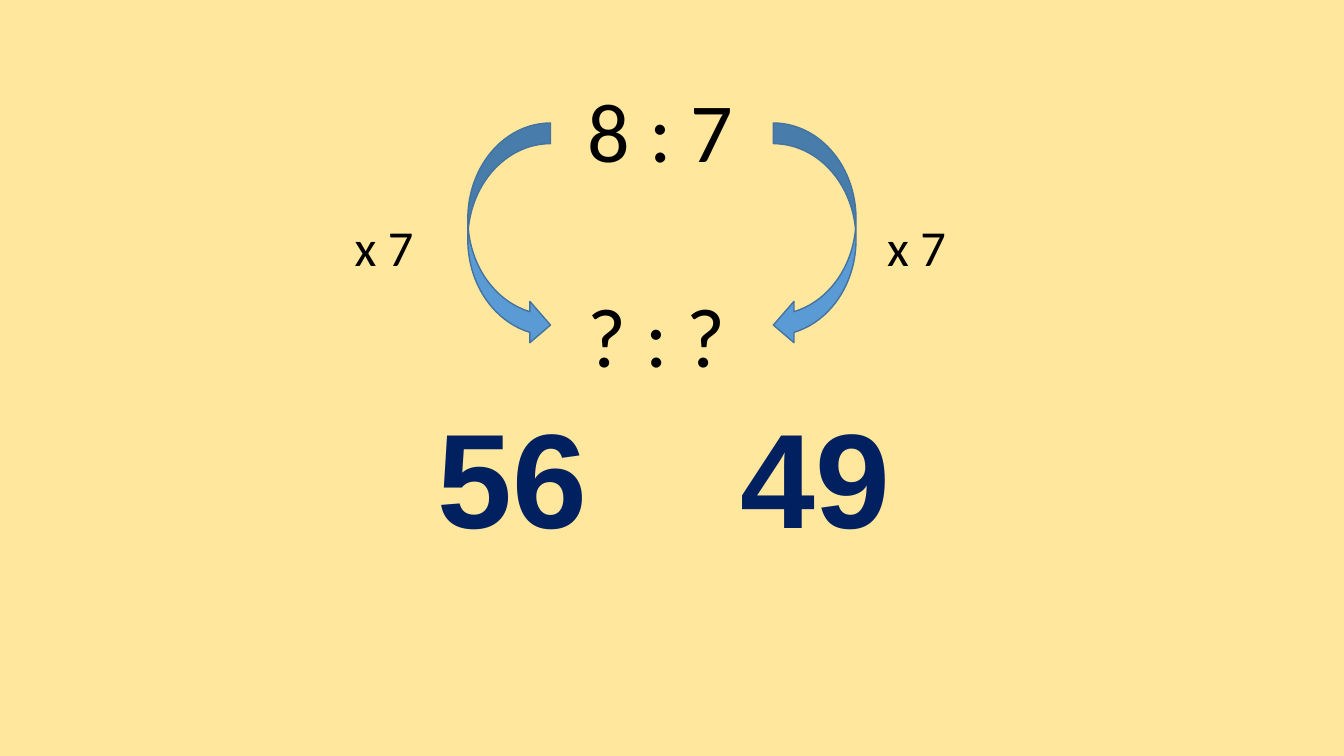
import pptx
import pptx.util
import pptx.dml.color
import pptx.enum.shapes
import pptx.enum.text

Inches = pptx.util.Inches
RGBColor = pptx.dml.color.RGBColor

CREAM = RGBColor(0xFF, 0xE7, 0x9E)
BLACK = RGBColor(0x00, 0x00, 0x00)
NAVY = RGBColor(0x00, 0x20, 0x60)
BLUE = RGBColor(0x5B, 0x9B, 0xD5)
DARK_BLUE = RGBColor(0x43, 0x73, 0x9E)


def add_text(text, left, top, width, height, size, font="Calibri", color=BLACK, bold=False):
    box = page.shapes.add_textbox(Inches(left), Inches(top), Inches(width), Inches(height))
    box.text_frame.word_wrap = True
    box.text_frame.vertical_anchor = pptx.enum.text.MSO_ANCHOR.TOP
    para = box.text_frame.paragraphs[0]
    span = para.add_run()
    span.text = text
    span.font.name = font
    span.font.size = pptx.util.Pt(size)
    span.font.bold = bold
    span.font.color.rgb = color


deck = pptx.Presentation()
deck.slide_width = Inches(13.33)
deck.slide_height = Inches(7.5)
page = deck.slides.add_slide(deck.slide_layouts[6])
page.background.fill.solid()
page.background.fill.fore_color.rgb = CREAM

for ratio, top in [("8 : 7", 0.73), ("? : ?", 2.76)]:
    add_text(ratio, 5.73, top, 1.8, 1.11, size=60)

for product, left in [("56", 4.24), ("49", 7.25)]:
    add_text(product, left, 3.86, 2.19, 1.72, size=96, font="Arial", color=NAVY, bold=True)

for arrow_left, label_left, flipped in [(4.64, 3.42, True), (7.67, 8.7, False)]:
    arrow = page.shapes.add_shape(
        pptx.enum.shapes.MSO_SHAPE.CURVED_LEFT_ARROW,
        Inches(arrow_left), Inches(1.22), Inches(0.82), Inches(2.21))
    arrow.shadow.inherit = False
    arrow.fill.solid()
    arrow.fill.fore_color.rgb = BLUE
    arrow.line.color.rgb = DARK_BLUE
    arrow.line.width = pptx.util.Pt(1)
    if flipped:
        arrow.element.spPr.xfrm.set("flipH", "1")
    add_text("x 7", label_left, 2.09, 0.9, 0.71, size=36)

deck.save("out.pptx")
